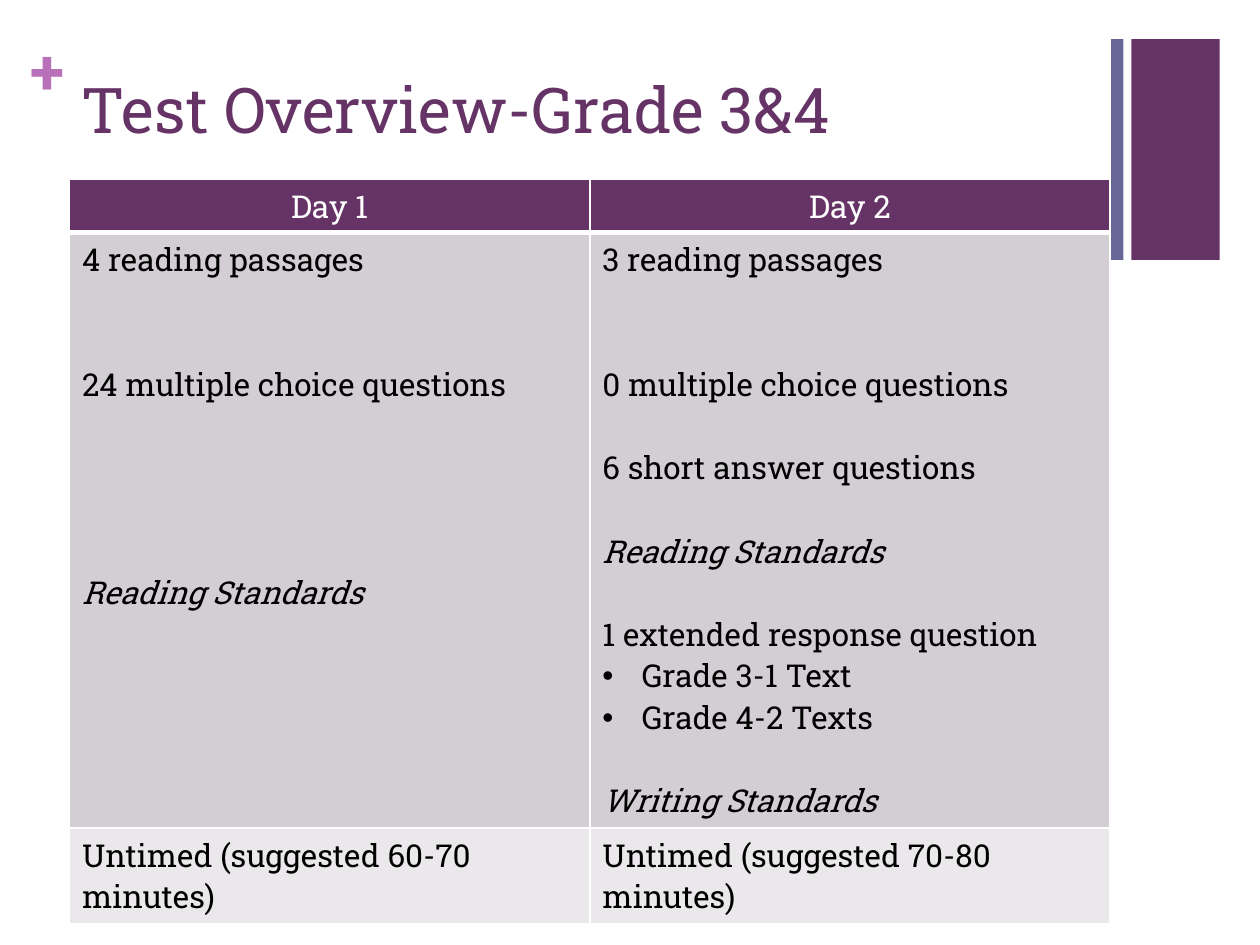
import pptx
import pptx.dml.color
import pptx.enum.shapes
import pptx.enum.text
import pptx.oxml
import pptx.oxml.ns
import pptx.util
from pptx.util import Cm

LINE_PITCH = 23.75  # points per 18 pt line
ALIGN = pptx.enum.text.PP_ALIGN


def colour(value):
    return pptx.dml.color.RGBColor.from_string(value)


def write(paragraph, text, font="Roboto Slab", size=18, color="000000",
          bold=False, italic=False, align=ALIGN.LEFT, gap=0, bullet=False):
    """Fill a paragraph; gap is the number of text lines left open above it."""
    run = paragraph.add_run()
    run.text = text
    run.font.name = font
    run.font.size = pptx.util.Pt(size)
    run.font.bold = bold
    run.font.italic = italic
    run.font.color.rgb = colour(color)
    paragraph.alignment = align
    if gap:
        paragraph.space_before = pptx.util.Pt(gap * LINE_PITCH)
    if bullet:
        properties = paragraph._p.get_or_add_pPr()
        properties.set("marL", str(Cm(0.79)))
        properties.set("indent", str(-Cm(0.79)))
        namespace = pptx.oxml.ns.nsdecls("a")
        for markup in (f'<a:buFont {namespace} typeface="Arial"/>',
                       f'<a:buChar {namespace} char="•"/>'):
            properties.append(pptx.oxml.parse_xml(markup))


class SlideBuilder:
    purple = "663366"
    slate = "666699"
    orchid = "B870B8"
    white = "FFFFFF"
    row_fills = (purple, "D3CED3", "EAE8EA")

    def __init__(self, slide):
        self.slide = slide

    def bar(self, left, top, width, height, fill):
        shape = self.slide.shapes.add_shape(
            pptx.enum.shapes.MSO_SHAPE.RECTANGLE,
            Cm(left), Cm(top), Cm(width), Cm(height))
        shape.shadow.inherit = False
        shape.fill.solid()
        shape.fill.fore_color.rgb = colour(fill)
        shape.line.fill.background()

    def text(self, left, top, width, height, text, inset=True, **style):
        shape = self.slide.shapes.add_textbox(
            Cm(left), Cm(top), Cm(width), Cm(height))
        frame = shape.text_frame
        frame.word_wrap = True
        if not inset:
            frame.margin_left = frame.margin_right = 0
            frame.margin_top = frame.margin_bottom = 0
        write(frame.paragraphs[0], text, **style)

    def borders(self, cell, bottom=1):
        properties = cell._tc.get_or_add_tcPr()
        widths = {"lnL": 1, "lnR": 1, "lnT": 1, "lnB": bottom}
        for position, (side, width) in enumerate(widths.items()):
            properties.insert(position, pptx.oxml.parse_xml(
                f'<a:{side} {pptx.oxml.ns.nsdecls("a")} '
                f'w="{pptx.util.Pt(width)}"><a:solidFill>'
                f'<a:srgbClr val="{self.white}"/></a:solidFill></a:{side}>'))

    def table(self, left, top, width, heights, rows):
        """Each cell is a list of (text, format) pairs, one per paragraph."""
        columns = len(rows[0])
        table = self.slide.shapes.add_table(
            len(rows), columns, Cm(left), Cm(top), Cm(width),
            Cm(sum(heights))).table
        for column in table.columns:
            column.width = Cm(width / columns)
        for row_index, row in enumerate(rows):
            table.rows[row_index].height = Cm(heights[row_index])
            for column_index, lines in enumerate(row):
                cell = table.cell(row_index, column_index)
                cell.fill.solid()
                cell.fill.fore_color.rgb = colour(self.row_fills[row_index])
                self.borders(cell, bottom=1 if row_index else 3)
                frame = cell.text_frame
                for line_index, (text, style) in enumerate(lines):
                    paragraph = (frame.add_paragraph() if line_index
                                 else frame.paragraphs[0])
                    write(paragraph, text, **style)


def main():
    presentation = pptx.Presentation()
    presentation.slide_width = Cm(25.4)
    presentation.slide_height = Cm(19.05)
    slide = presentation.slides.add_slide(presentation.slide_layouts[6])
    builder = SlideBuilder(slide)

    builder.bar(22.81, 0.79, 1.78, 4.45, builder.purple)
    builder.text(0.61, 0.64, 0.74, 1.55, "+", inset=False,
                 size=36, color=builder.orchid, bold=True)
    builder.bar(22.4, 0.79, 0.25, 4.45, builder.slate)
    builder.text(1.4, 1.3, 20.98, 2.08, "Test Overview-Grade 3&4",
                 size=36, color=builder.purple)

    header = {"color": builder.white, "align": ALIGN.CENTER}
    day_1 = [
        ("4 reading passages", {}),
        ("24 multiple choice questions", {"gap": 2}),
        ("Reading Standards", {"gap": 4, "italic": True}),
    ]
    day_2 = [
        ("3 reading passages", {}),
        ("0 multiple choice questions", {"gap": 2}),
        ("6 short answer questions", {"gap": 1}),
        ("Reading Standards", {"gap": 1, "italic": True}),
        ("1 extended response question", {"gap": 1}),
        ("Grade 3-1 Text", {"bullet": True}),
        ("Grade 4-2 Texts", {"bullet": True}),
        ("Writing Standards", {"gap": 1, "italic": True}),
    ]
    builder.table(1.4, 3.61, 20.98, (1.08, 12, 1.93), [
        [[("Day 1", header)], [("Day 2", header)]],
        [day_1, day_2],
        [[(f"Untimed (suggested {span} minutes)", {})]
         for span in ("60-70", "70-80")],
    ])
    presentation.save("out.pptx")


if __name__ == "__main__":
    main()
